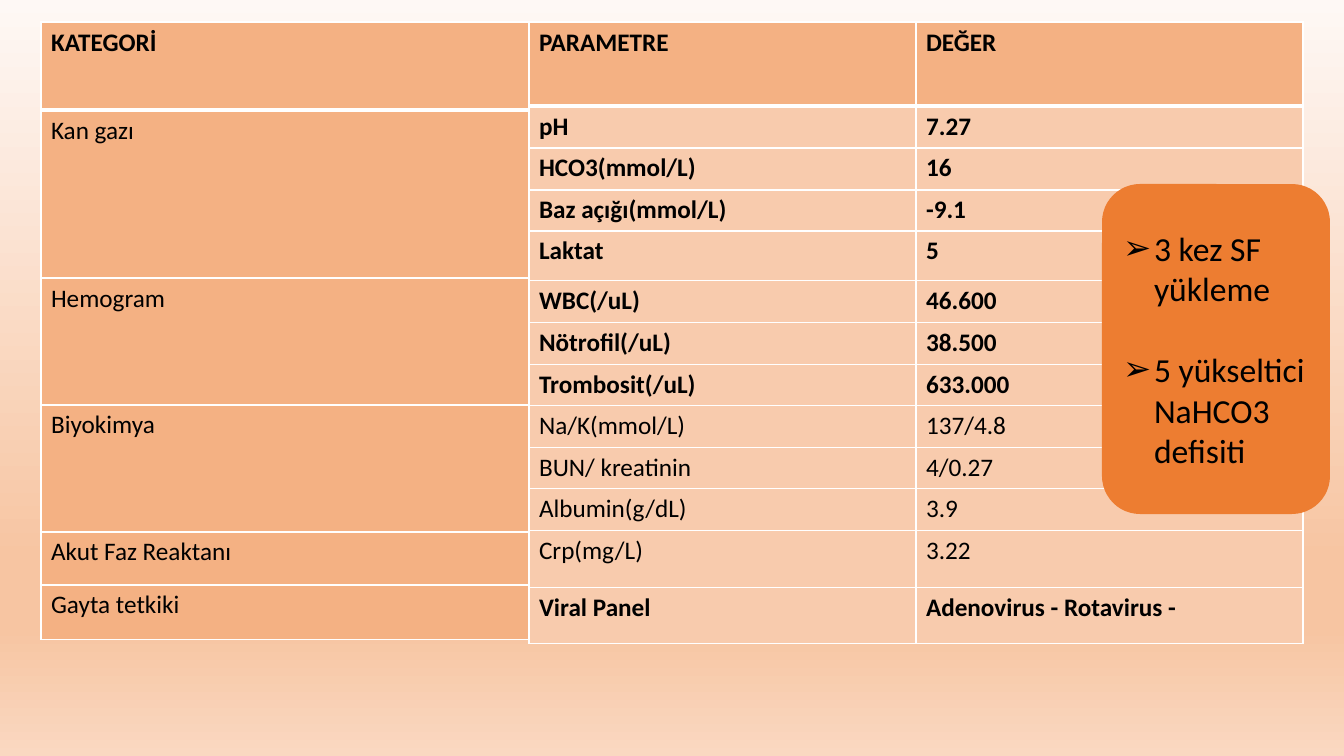
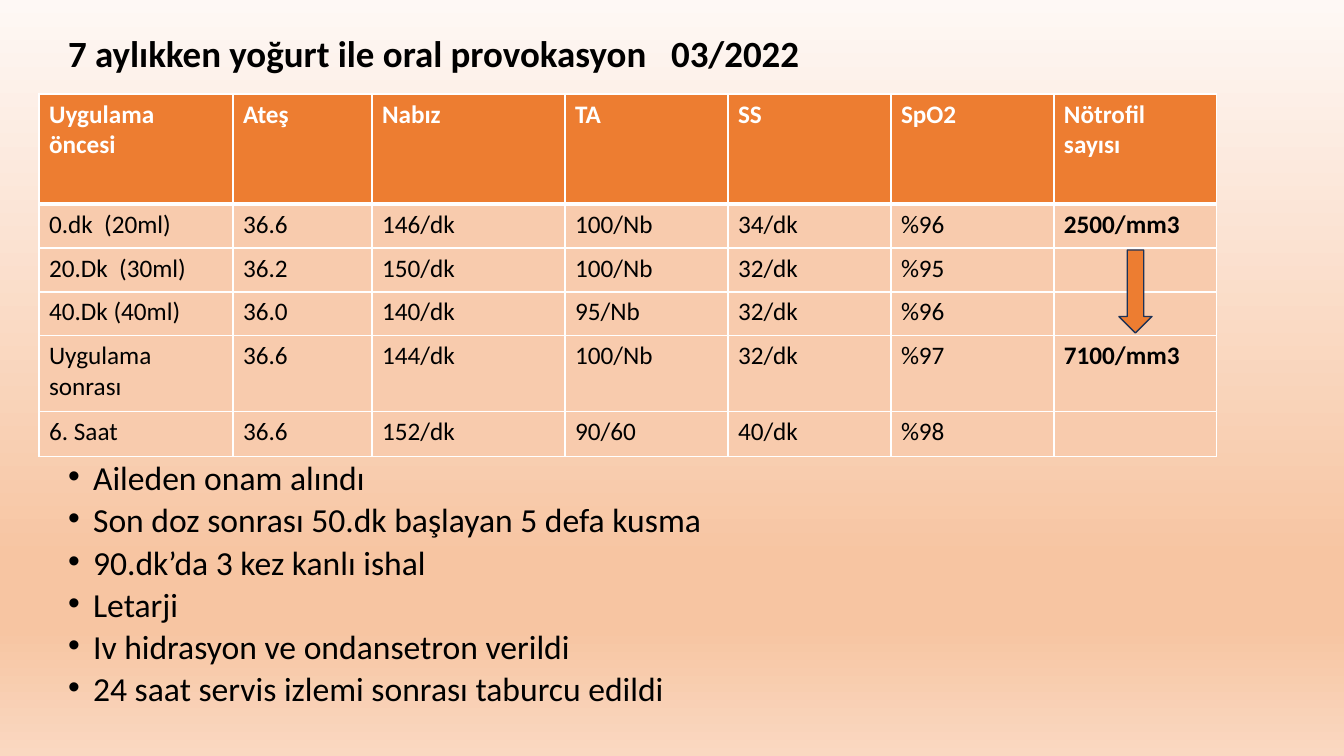
from dataclasses import dataclass

from lxml import etree
from pptx import Presentation
from pptx.dml.color import RGBColor
from pptx.enum.shapes import MSO_SHAPE
from pptx.enum.text import MSO_ANCHOR, MSO_AUTO_SIZE, PP_ALIGN
from pptx.oxml.ns import qn
from pptx.util import Pt

ROUNDED, DOWN_ARROW = MSO_SHAPE.ROUNDED_RECTANGLE, MSO_SHAPE.DOWN_ARROW
TOP, MIDDLE = MSO_ANCHOR.TOP, MSO_ANCHOR.MIDDLE
LEFT = PP_ALIGN.LEFT
NO_AUTOFIT = MSO_AUTO_SIZE.NONE
SLIDE_W, SLIDE_H = 1344, 756
SCALE = 12192000 / SLIDE_W


@dataclass(frozen=True)
class Theme:
    font: str = "Calibri"
    ink: str = "000000"
    white: str = "FFFFFF"
    accent: str = "ED7D31"
    medium: str = "F4B183"
    pale: str = "F8CBAD"
    outline: str = "1E3256"
    backdrop: tuple = ((0, "FEF8F5"), (74, "F7C5A2"), (83, "F7C5A2"), (100, "FAD8C1"))
    title_size: float = 26.4
    list_size: int = 24
    table_size: int = 18


THEME = Theme()


def px(*lengths):
    """Turn pixel lengths into a list of EMU."""
    return [round(length * SCALE) for length in lengths]


def write(frame, *lines, size=THEME.table_size, color=THEME.ink, bold=False, bullet=None,
          indent=0, tab=None, spacing=None, gap=None, anchor=TOP):
    """Fill a text frame, one paragraph a line; indent and tab are px, gap is points."""
    frame.word_wrap = True
    frame.vertical_anchor = anchor
    for number, line in enumerate(lines):
        paragraph = frame.add_paragraph() if number else frame.paragraphs[0]
        properties = paragraph._p.get_or_add_pPr()
        if bullet:
            hang, = px(indent)
            properties.set("marL", str(hang))
            properties.set("indent", str(-hang))
            etree.SubElement(properties, qn("a:buFont"), typeface="Arial")
            etree.SubElement(properties, qn("a:buChar"), char=bullet)
        if tab:
            stops = etree.SubElement(properties, qn("a:tabLst"))
            etree.SubElement(stops, qn("a:tab"), pos=str(px(tab)[0]), algn="l")
        paragraph.alignment = LEFT
        paragraph.line_spacing = spacing
        paragraph.space_before = Pt(gap) if number and gap else Pt(0)
        run = paragraph.add_run()
        run.text = line
        run.font.name, run.font.size, run.font.bold = THEME.font, Pt(size), bold
        run.font.color.rgb = RGBColor.from_string(color)


def add_grid(slide, left, top, widths, heights, rows, is_bold, header_fill, body_fill,
             header_color=THEME.ink):
    """Add a white-ruled table; is_bold(row, column) picks the bold cells."""
    table = slide.shapes.add_table(
        len(rows), len(widths), *px(left, top, sum(widths), sum(heights))).table
    for column, width in zip(table.columns, px(*widths)):
        column.width = width
    for r, (height, texts) in enumerate(zip(px(*heights), rows)):
        table.rows[r].height = height
        for c, text in enumerate(texts):
            cell = table.cell(r, c)
            properties = cell._tc.get_or_add_tcPr()
            for side in "LRTB":
                heavy = (r, side) in ((0, "B"), (1, "T"))
                border = etree.SubElement(properties, qn(f"a:ln{side}"),
                                          w=str(Pt(3 if heavy else 1)))
                paint = etree.SubElement(border, qn("a:solidFill"))
                etree.SubElement(paint, qn("a:srgbClr"), val=THEME.white)
            cell.fill.solid()
            cell.fill.fore_color.rgb = RGBColor.from_string(body_fill if r else header_fill)
            if text:
                write(cell.text_frame, text, bold=is_bold(r, c),
                      color=THEME.ink if r else header_color)


prs = Presentation()
prs.slide_width, prs.slide_height = px(SLIDE_W, SLIDE_H)

# Shared backdrop, set on the master
backdrop = prs.slide_master.background.fill
backdrop.gradient()
backdrop.gradient_angle = 270
stop_list = prs.slide_master.element.find(".//" + qn("a:gsLst"))
for default_stop in list(stop_list):
    stop_list.remove(default_stop)
for percent, color in THEME.backdrop:
    stop = etree.SubElement(stop_list, qn("a:gs"), pos=str(percent * 1000))
    etree.SubElement(stop, qn("a:srgbClr"), val=color)

# Slide 1: laboratory results
lab_slide = prs.slides.add_slide(prs.slide_layouts[6])
results = [
    ("PARAMETRE", "DEĞER"),
    ("pH", "7.27"),
    ("HCO3(mmol/L)", "16"),
    ("Baz açığı(mmol/L)", "-9.1"),
    ("Laktat", "5"),
    ("WBC(/uL)", "46.600"),
    ("Nötrofil(/uL)", "38.500"),
    ("Trombosit(/uL)", "633.000"),
    ("Na/K(mmol/L)", "137/4.8"),
    ("BUN/ kreatinin", "4/0.27"),
    ("Albumin(g/dL)", "3.9"),
    ("Crp(mg/L)", "3.22"),
    ("Viral Panel", "Adenovirus - Rotavirus -"),
]
add_grid(lab_slide, 529, 22, [387, 387],
         [84, 42, 42, 41, 50, 42, 42, 41, 42, 41, 42, 57, 56], results,
         lambda r, c: not 8 <= r <= 11, THEME.medium, THEME.pale)
categories = ["KATEGORİ", "Kan gazı", "Hemogram", "Biyokimya", "Akut Faz Reaktanı",
              "Gayta tetkiki"]
add_grid(lab_slide, 41, 22, [488], [88, 168, 127, 127, 53, 55],
         [(category,) for category in categories],
         lambda r, c: r == 0, THEME.medium, THEME.medium)

treatment = lab_slide.shapes.add_shape(ROUNDED, *px(1102, 184, 228, 330))
treatment.shadow.inherit = False
treatment.fill.solid()
treatment.fill.fore_color.rgb = RGBColor.from_string(THEME.accent)
treatment.line.fill.background()
write(treatment.text_frame, "3 kez SF yükleme", "5 yükseltici NaHCO3 defisiti",
      size=THEME.list_size, bullet="➢", indent=31, gap=29, anchor=MIDDLE)

# Slide 2: oral provocation
test_slide = prs.slides.add_slide(prs.slide_layouts[1])
title, course = test_slide.placeholders
for holder, box in ((title, (58, 38, 1075, 50)), (course, (58, 463, 1075, 260))):
    holder.left, holder.top, holder.width, holder.height = px(*box)
    holder.text_frame.auto_size = NO_AUTOFIT
write(title.text_frame, "7 aylıkken yoğurt ile oral provokasyon\t03/2022",
      size=THEME.title_size, bold=True, tab=603, spacing=0.7)
write(course.text_frame,
      "Aileden onam alındı",
      "Son doz sonrası 50.dk başlayan 5 defa kusma",
      "90.dk’da 3 kez kanlı ishal",
      "Letarji",
      "Iv hidrasyon ve ondansetron verildi",
      "24 saat servis izlemi sonrası taburcu edildi",
      size=THEME.list_size, bullet="•", indent=25, spacing=0.7, gap=10)

vitals = [
    ("Uygulama öncesi", "Ateş", "Nabız", "TA", "SS", "SpO2", "Nötrofil sayısı"),
    ("0.dk  (20ml)", "36.6", "146/dk", "100/Nb", "34/dk", "%96", "2500/mm3"),
    ("20.Dk  (30ml)", "36.2", "150/dk", "100/Nb", "32/dk", "%95", ""),
    ("40.Dk (40ml)", "36.0", "140/dk", "95/Nb", "32/dk", "%96", ""),
    ("Uygulama sonrası", "36.6", "144/dk", "100/Nb", "32/dk", "%97", "7100/mm3"),
    ("6. Saat", "36.6", "152/dk", "90/60", "40/dk", "%98", ""),
]
add_grid(test_slide, 39, 94, [194, 139, 193] + [163] * 4, [110, 44, 44, 44, 76, 45], vitals,
         lambda r, c: r == 0 or c == 6, THEME.accent, THEME.pale, THEME.white)

neutrophil_rise = test_slide.shapes.add_shape(DOWN_ARROW, *px(1119, 250, 33, 83))
neutrophil_rise.shadow.inherit = False
neutrophil_rise.fill.solid()
neutrophil_rise.fill.fore_color.rgb = RGBColor.from_string(THEME.accent)
neutrophil_rise.line.color.rgb = RGBColor.from_string(THEME.outline)
neutrophil_rise.line.width = Pt(1)

prs.save("out.pptx")
